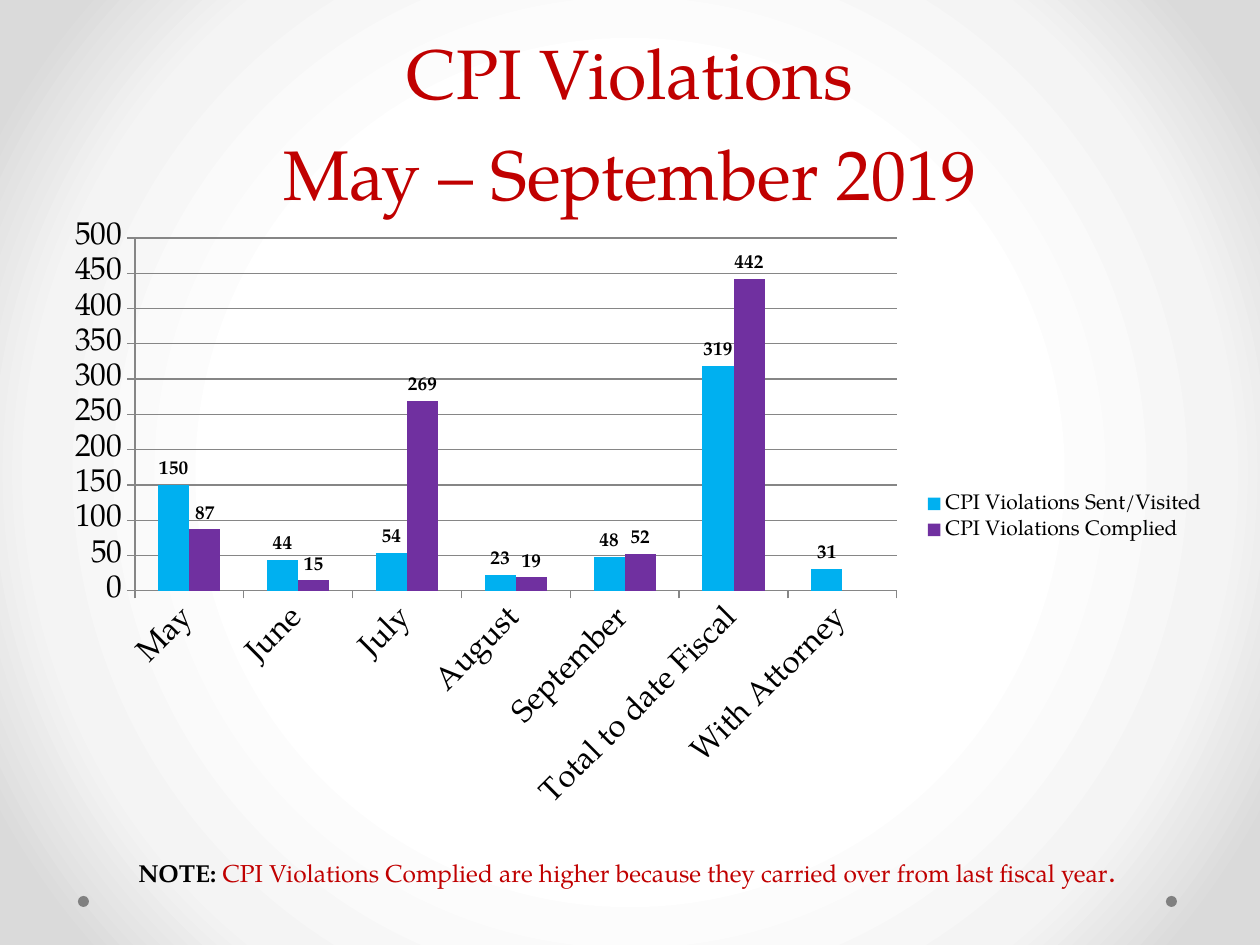
from pptx import Presentation
from pptx.chart.data import CategoryChartData
from pptx.dml.color import RGBColor
from pptx.enum.chart import XL_CHART_TYPE, XL_LABEL_POSITION, XL_LEGEND_POSITION, XL_TICK_MARK
from pptx.enum.shapes import MSO_SHAPE
from pptx.enum.text import MSO_ANCHOR, MSO_AUTO_SIZE, PP_ALIGN
from pptx.oxml import parse_xml
from pptx.oxml.ns import nsdecls, qn
from pptx.util import Pt

EMU_PER_PX = 914400 / 126
FONT = "TeX Gyre Pagella"
BLACK = RGBColor(0, 0, 0)
GRAY = RGBColor(0x80, 0x80, 0x80)
GRID_GRAY = RGBColor(0x86, 0x86, 0x86)
RED = RGBColor(0xC0, 0, 0)
BLUE = RGBColor(0, 0xB0, 0xF0)
PURPLE = RGBColor(0x70, 0x30, 0xA0)
BACKGROUND_STOPS = [(50, "FFFFFF"), (76, "F4F4F4"), (92, "DADADA")]
CATEGORIES = ["May", "June", "July", "August", "September",
              "Total to date Fiscal", "With Attorney"]
SERIES = [
    ("CPI Violations Sent/Visited", [150, 44, 54, 23, 48, 319, 31], BLUE),
    ("CPI Violations Complied", [87, 15, 269, 19, 52, 442, None], PURPLE),
]


def px(value):
    """Turn pixels into EMU."""
    return round(value * EMU_PER_PX)


def apply(target, values):
    """Set each attribute of the target from a dict."""
    for name, value in values.items():
        setattr(target, name, value)


class SlideBuilder:
    """Holds the font style and the current slide."""

    def __init__(self, slide, font_name):
        """Keep the slide and the font name."""
        self.slide = slide
        self.font_name = font_name

    def style(self, font, size, color, bold=False):
        """Format a font."""
        apply(font, {"name": self.font_name, "size": Pt(size), "bold": bold})
        font.color.rgb = color

    def place(self, shape, left, top, width, height):
        """Move and size a shape."""
        apply(shape, {"left": px(left), "top": px(top),
                      "width": px(width), "height": px(height)})

    def background(self, stops):
        """Fill the background with a centred circular gradient."""
        self.slide.background.fill.gradient()
        gradient = self.slide.element.find(".//" + qn("a:gradFill"))
        stop_xml = "".join(
            f'<a:gs pos="{position * 1000}"><a:srgbClr val="{color}"/></a:gs>'
            for position, color in stops)
        gradient.getparent().replace(gradient, parse_xml(
            f'<a:gradFill {nsdecls("a")} rotWithShape="1"><a:gsLst>{stop_xml}</a:gsLst>'
            '<a:path path="circle"><a:fillToRect l="50000" t="50000" r="50000" b="50000"/>'
            '</a:path></a:gradFill>'))

    def dot(self, left, top, size, color):
        """Add a plain round dot."""
        shape = self.slide.shapes.add_shape(
            MSO_SHAPE.OVAL, px(left), px(top), px(size), px(size))
        shape.shadow.inherit = False
        shape.fill.solid()
        shape.fill.fore_color.rgb = color
        shape.line.fill.background()

    def title(self, text, box, size, color, spacing):
        """Fill the title placeholder."""
        shape = self.slide.shapes.title
        self.place(shape, *box)
        frame = shape.text_frame
        frame.text = text
        apply(frame, {"vertical_anchor": MSO_ANCHOR.BOTTOM, "word_wrap": True,
                      "auto_size": MSO_AUTO_SIZE.NONE})
        paragraph = frame.paragraphs[0]
        apply(paragraph, {"alignment": PP_ALIGN.CENTER, "line_spacing": Pt(spacing)})
        for run in paragraph.runs:
            self.style(run.font, size, color)

    def note(self, box, runs):
        """Add one line of text made of formatted runs."""
        shape = self.slide.shapes.add_textbox(*map(px, box))
        apply(shape.text_frame, {"word_wrap": False,
                                 "auto_size": MSO_AUTO_SIZE.SHAPE_TO_FIT_TEXT})
        paragraph = shape.text_frame.paragraphs[0]
        for text, size, color, bold in runs:
            run = paragraph.add_run()
            run.text = text
            self.style(run.font, size, color, bold)

    def column_chart(self, box, plot_box, categories, series_list):
        """Add a clustered column chart with its plot at a set place."""
        data = CategoryChartData()
        data.categories = categories
        for name, values, _ in series_list:
            data.add_series(name, values)
        chart = self.slide.shapes.add_chart(
            XL_CHART_TYPE.COLUMN_CLUSTERED, *map(px, box), data).chart
        self.style(chart.font, 18, BLACK)
        apply(chart, {"has_title": False, "has_legend": True})
        apply(chart.legend, {"position": XL_LEGEND_POSITION.RIGHT,
                             "include_in_layout": False})
        self.style(chart.legend.font, 12, BLACK)
        plot = chart.plots[0]
        apply(plot, {"gap_width": 150, "overlap": 0, "vary_by_categories": False})
        for series, (_, _, color) in zip(plot.series, series_list):
            series.format.fill.solid()
            series.format.fill.fore_color.rgb = color
            labels = series.data_labels
            apply(labels, {"show_value": True, "position": XL_LABEL_POSITION.OUTSIDE_END})
            self.style(labels.font, 11, BLACK, True)
        self.axes(chart)
        self.plot_layout(chart, box, plot_box)

    def axes(self, chart):
        """Format both axes and the gridlines."""
        for axis in (chart.category_axis, chart.value_axis):
            axis.major_tick_mark = XL_TICK_MARK.OUTSIDE
            axis.format.line.color.rgb = GRID_GRAY
            self.style(axis.tick_labels.font, 18, BLACK)
        apply(chart.value_axis, {"minimum_scale": 0, "maximum_scale": 500,
                                 "major_unit": 50, "has_major_gridlines": True})
        chart.value_axis.major_gridlines.format.line.color.rgb = GRID_GRAY
        body = chart.category_axis._element.find(".//" + qn("a:bodyPr"))
        body.set("rot", "-2700000")
        body.set("vert", "horz")

    def plot_layout(self, chart, box, plot_box):
        """Set the inner plot area as fractions of the chart."""
        left, top, width, height = box
        plot_left, plot_top, plot_width, plot_height = plot_box
        fractions = {"x": (plot_left - left) / width, "y": (plot_top - top) / height,
                     "w": plot_width / width, "h": plot_height / height}
        modes = "".join(f'<c:{key}Mode val="edge"/>' for key in "xy")
        sizes = "".join(f'<c:{key} val="{value:.4f}"/>' for key, value in fractions.items())
        area = chart._chartSpace.find(".//" + qn("c:plotArea"))
        for layout in area.findall(qn("c:layout")):
            area.remove(layout)
        area.insert(0, parse_xml(
            f'<c:layout {nsdecls("c")}><c:manualLayout><c:layoutTarget val="inner"/>'
            f'{modes}{sizes}</c:manualLayout></c:layout>'))


def main():
    """Build and save the slide."""
    presentation = Presentation()
    apply(presentation, {"slide_width": px(1260), "slide_height": px(945)})
    slide = presentation.slides.add_slide(presentation.slide_layouts[5])
    builder = SlideBuilder(slide, FONT)
    builder.background(BACKGROUND_STOPS)
    for left in (1166, 78):
        builder.dot(left, 896, 11, GRAY)
    builder.title("CPI Violations\vMay – September 2019", (63, 0, 1134, 221), 40, RED, 58)
    builder.column_chart((53, 210, 1166, 614), (135, 238, 762, 353), CATEGORIES, SERIES)
    builder.note((126, 845, 1013, 50), [
        ("NOTE: ", 14, BLACK, True),
        ("CPI Violations Complied are higher because they carried over from last fiscal year",
         14, RED, False),
        (".", 18, RED, False),
    ])
    presentation.save("out.pptx")


if __name__ == "__main__":
    main()
